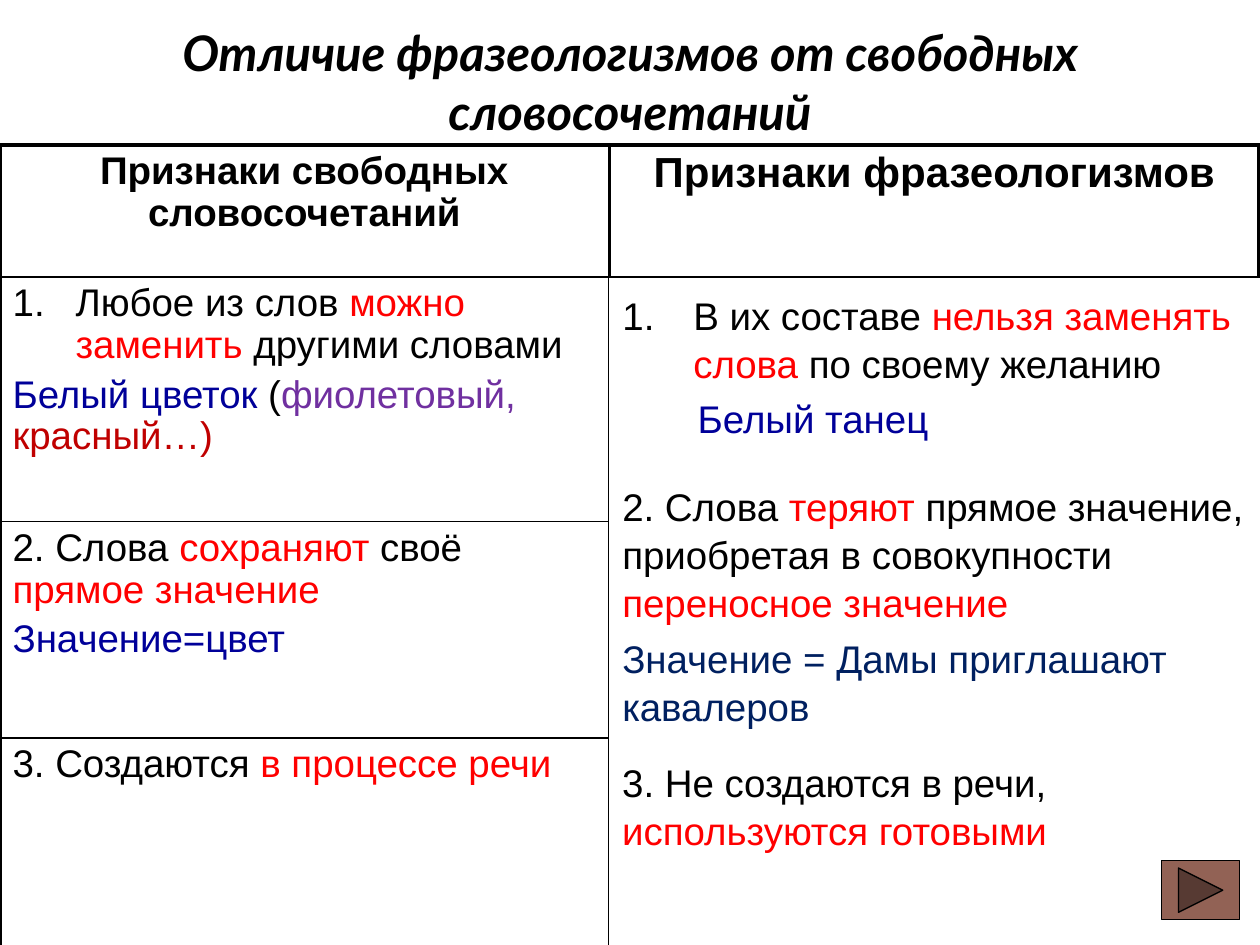
from lxml import etree
from pptx import Presentation
from pptx.dml.color import RGBColor
from pptx.enum import shapes, text
from pptx.oxml import ns
from pptx.util import Pt

BLACK = RGBColor(0x00, 0x00, 0x00)
RED = RGBColor(0xFF, 0x00, 0x00)
BLUE = RGBColor(0x00, 0x00, 0x99)
NAVY = RGBColor(0x00, 0x20, 0x60)
PURPLE = RGBColor(0x70, 0x30, 0xA0)
DARK_RED = RGBColor(0xC0, 0x00, 0x00)
BROWN = RGBColor(0x92, 0x62, 0x55)

THICK, THIN = 2.25, 1
TABLE_TOP, HEADER_HEIGHT = 82.8, 75.6
RIGHT_LEFT = 348.5


def write_paragraph(frame, spans, first=False, size=22, font="Arial", bold=False,
                    italic=False, align=text.PP_ALIGN.LEFT, before=4.4,
                    spacing=1.0, indent=0, numbered=False):
    """Write (text, colour) spans as one paragraph of the frame."""
    paragraph = frame.paragraphs[0] if first else frame.add_paragraph()
    paragraph.alignment = align
    paragraph.space_before = Pt(before)
    paragraph.line_spacing = spacing
    properties = paragraph._p.get_or_add_pPr()
    properties.set("marL", str(Pt(indent)))
    properties.set("indent", str(Pt(-indent if numbered else 0)))
    if numbered:
        bullet = etree.SubElement(properties, ns.qn("a:buAutoNum"))
        bullet.set("type", "arabicPeriod")
    else:
        etree.SubElement(properties, ns.qn("a:buNone"))
    for words, color in spans:
        run = paragraph.add_run()
        run.text = words
        run.font.size, run.font.name = Pt(size), font
        run.font.bold, run.font.italic = bold, italic
        run.font.color.rgb = color


def write_paragraphs(frame, paragraphs, **common):
    """Fill a frame with (spans, format) pairs."""
    for index, (spans, options) in enumerate(paragraphs):
        write_paragraph(frame, spans, first=index == 0, **{**common, **options})


def place(shape, left, top, width, height):
    """Move a text shape and make it wrap from its top."""
    shape.left, shape.top = Pt(left), Pt(top)
    shape.width, shape.height = Pt(width), Pt(height)
    frame = shape.text_frame
    frame.word_wrap = True
    frame.auto_size = text.MSO_AUTO_SIZE.NONE
    frame.vertical_anchor = text.MSO_ANCHOR.TOP
    return frame


def set_borders(cell, **widths):
    properties = cell._tc.get_or_add_tcPr()
    for index, side in enumerate("LRTB"):
        line = etree.Element(ns.qn(f"a:ln{side}"), w=str(Pt(widths[side])))
        fill = etree.SubElement(line, ns.qn("a:solidFill"))
        etree.SubElement(fill, ns.qn("a:srgbClr"), val=str(BLACK))
        properties.insert(index, line)


def add_column_table(slide, left, width, heights, contents, left_line, right_line,
                     bottom_line):
    """Add a one-column table with a thick line on top."""
    table = slide.shapes.add_table(len(heights), 1, Pt(left), Pt(TABLE_TOP),
                                   Pt(width), Pt(sum(heights))).table
    table.first_row = table.horz_banding = False
    table.columns[0].width = Pt(width)
    last = len(heights) - 1
    for index, (height, paragraphs) in enumerate(zip(heights, contents)):
        table.rows[index].height = Pt(height)
        cell = table.cell(index, 0)
        cell.fill.background()
        set_borders(cell, L=left_line, R=right_line,
                    T=THICK if index == 0 else THIN,
                    B=bottom_line if index == last else THIN)
        write_paragraphs(cell.text_frame, paragraphs, spacing=0.97)


def add_next_button(slide, left, top, width, height):
    button = slide.shapes.add_shape(
        shapes.MSO_SHAPE.ACTION_BUTTON_FORWARD_OR_NEXT,
        Pt(left), Pt(top), Pt(width), Pt(height))
    button.shadow.inherit = False
    button.fill.solid()
    button.fill.fore_color.rgb = BROWN
    button.line.color.rgb = BLACK
    button.line.width = Pt(0.75)


def main():
    presentation = Presentation()
    presentation.slide_width, presentation.slide_height = Pt(720), Pt(540)
    slide = presentation.slides.add_slide(presentation.slide_layouts[1])
    header = {"bold": True, "align": text.PP_ALIGN.CENTER}

    # Title
    title = place(slide.shapes.title, 0, 9.4, 720, 97)
    write_paragraph(title, [("Отличие фразеологизмов от свободных словосочетаний", BLACK)],
                    first=True, size=28, font="Lato", italic=True, before=0, **header)

    # Left column: free word combinations
    free_features = [
        [([("Признаки свободных словосочетаний", BLACK)], header)],
        [([("Любое из слов ", BLACK), ("можно заменить", RED),
           (" другими словами", BLACK)], {"indent": 36, "numbered": True}),
         ([("Белый цветок ", BLUE), ("(", BLACK), ("фиолетовый, ", PURPLE),
           ("красный…)", DARK_RED)], {})],
        [([("2. Слова ", BLACK), ("сохраняют ", RED), ("своё ", BLACK),
           ("прямое значение", RED)], {}),
         ([("Значение=цвет", BLUE)], {})],
        [([("3. Создаются ", BLACK), ("в процессе речи", RED)], {})],
    ]
    add_column_table(slide, 0, 347.8, [HEADER_HEIGHT, 139.7, 123.8, 139],
                     free_features, THICK, THIN, THICK)

    # Right column: header
    add_column_table(slide, RIGHT_LEFT, 370.8, [HEADER_HEIGHT],
                     [[([("Признаки фразеологизмов", BLACK)], {"size": 24, **header})]],
                     THIN, THICK, THIN)

    # Right column: features of idioms
    first_feature = place(slide.placeholders[1], RIGHT_LEFT, 162, 371.5, 93)
    second_feature = place(slide.shapes.add_textbox(0, 0, 0, 0),
                           RIGHT_LEFT, 271.4, 386, 146)
    third_feature = place(slide.shapes.add_textbox(0, 0, 0, 0),
                          RIGHT_LEFT, 429, 360, 60.5)
    idiom_features = [
        (first_feature, [
            ([("В их составе ", BLACK), ("нельзя заменять слова", RED),
              (" по своему желанию", BLACK)], {"indent": 40.5, "numbered": True}),
            ([("Белый танец", BLUE)], {"indent": 43})]),
        (second_feature, [
            ([("2. Слова ", BLACK), ("теряют", RED),
              (" прямое значение, приобретая в совокупности ", BLACK),
              ("переносное значение", RED)], {}),
            ([("Значение = Дамы приглашают кавалеров", NAVY)], {})]),
        (third_feature, [
            ([("3. Не создаются в речи, ", BLACK),
              ("используются готовыми", RED)], {})]),
    ]
    for frame, paragraphs in idiom_features:
        write_paragraphs(frame, paragraphs, spacing=1.04)

    # Button to the next slide
    add_next_button(slide, 663.8, 491.8, 44.6, 33.8)

    presentation.save("out.pptx")


if __name__ == "__main__":
    main()
